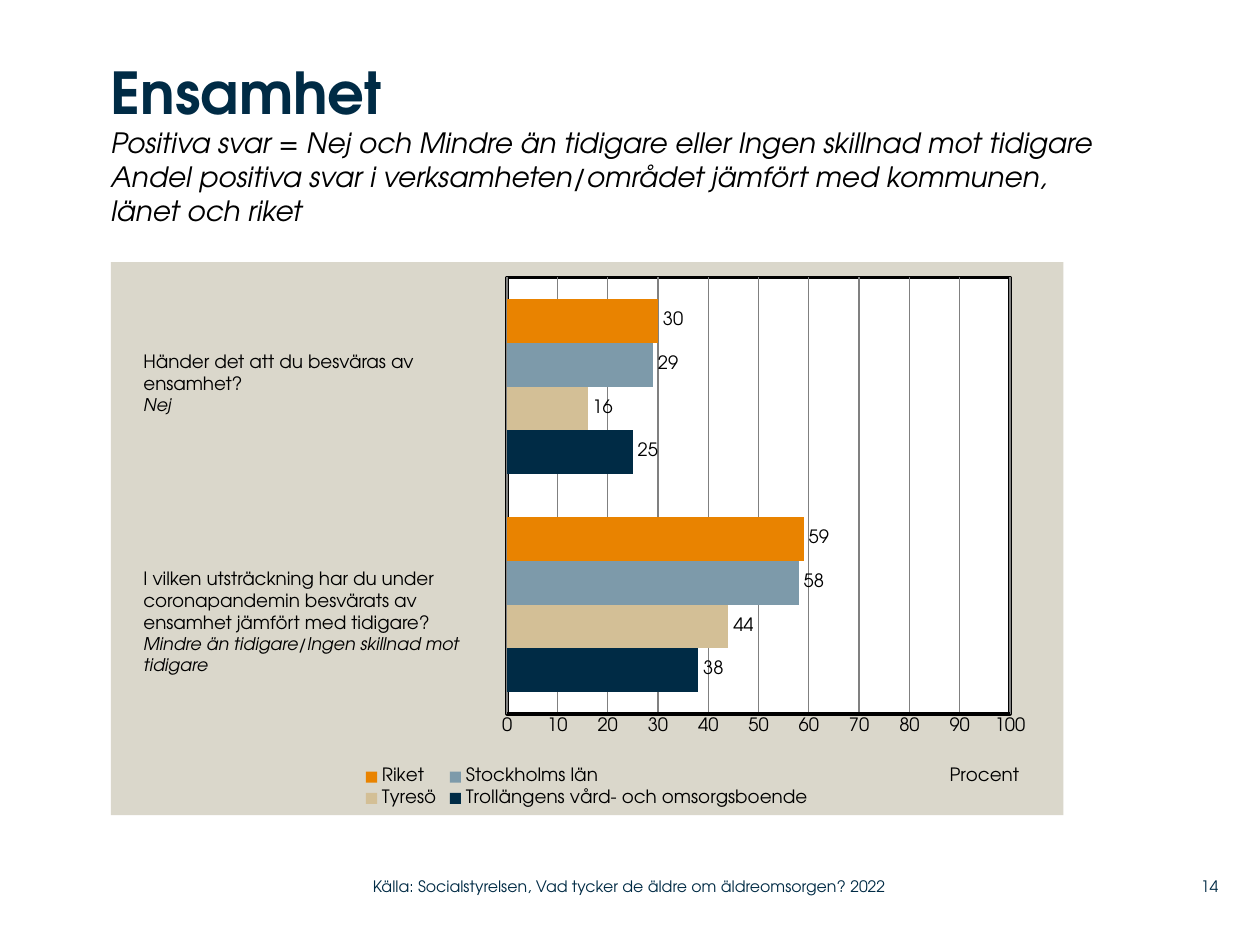
from lxml import etree
from pptx import Presentation
from pptx.chart.data import CategoryChartData
from pptx.dml.color import RGBColor
from pptx.enum.chart import XL_CHART_TYPE, XL_LABEL_POSITION, XL_LEGEND_POSITION, XL_TICK_MARK
from pptx.enum.text import MSO_ANCHOR, PP_ALIGN
from pptx.oxml import parse_xml
from pptx.oxml.ns import nsdecls, qn
from pptx.util import Inches, Pt

BARS = XL_CHART_TYPE.BAR_CLUSTERED
BOTTOM = XL_LEGEND_POSITION.BOTTOM
OUTER = XL_LABEL_POSITION.OUTSIDE_END
NO_TICK = XL_TICK_MARK.NONE
TOP, MIDDLE = MSO_ANCHOR.TOP, MSO_ANCHOR.MIDDLE
LEFT, RIGHT = PP_ALIGN.LEFT, PP_ALIGN.RIGHT
FACE, NAVY, BLACK = "TeX Gyre Adventor", "002B45", "000000"


def color(code):
    return RGBColor.from_string(code)


def layout(x, y, w=None, h=None, inner=False):
    """Manual chart layout, in shares of the chart's size."""
    node = parse_xml(f"<c:layout {nsdecls('c')}><c:manualLayout/></c:layout>")
    parts = [("layoutTarget", "inner")] if inner else []
    parts += [("xMode", "edge"), ("yMode", "edge"), ("x", x), ("y", y)]
    parts += [("w", w), ("h", h)] if w else []
    for tag, val in parts:
        etree.SubElement(node[0], qn(f"c:{tag}")).set("val", str(val))
    return node


deck = Presentation()
deck.slide_width, deck.slide_height = Inches(10), Inches(7.5)
slide = deck.slides.add_slide(deck.slide_layouts[6])

# Chart
data = CategoryChartData()
data.categories = ["1", "2"]
rows = [
    ("Trollängens vård- och omsorgsboende", (38, 25), NAVY),
    ("Tyresö", (44, 16), "D3BF96"),
    ("Stockholms län", (58, 29), "7D9AAA"),
    ("Riket", (59, 30), "E98300"),
]
for name, vals, _ in rows:
    data.add_series(name, vals)
chart = slide.shapes.add_chart(
    BARS, Inches(0.88), Inches(2.08), Inches(7.56), Inches(4.39), data).chart
chart.has_title = False
chart.font.name, chart.font.size = FACE, Pt(10.5)
chart.font.color.rgb = color(BLACK)

# Bars and their values
plot = chart.plots[0]
plot.gap_width, plot.overlap = 100, 0
plot.vary_by_categories = False
for bar, (_, _, fill) in zip(plot.series, rows):
    bar.format.fill.solid()
    bar.format.fill.fore_color.rgb = color(fill)
plot.has_data_labels = True
plot.data_labels.show_value = True
plot.data_labels.position = OUTER

# Axes
chart.category_axis.visible = False
axis = chart.value_axis
axis.minimum_scale, axis.maximum_scale, axis.major_unit = 0, 100, 10
axis.major_tick_mark = axis.minor_tick_mark = NO_TICK
axis.format.line.color.rgb = color(BLACK)
axis.format.line.width = Pt(2)
axis.has_major_gridlines = True
grid = axis.major_gridlines.format.line
grid.color.rgb, grid.width = color("808080"), Pt(0.75)
title = axis.axis_title
title.text_frame.text = "Procent"
font = title.text_frame.paragraphs[0].runs[0].font
font.name, font.size, font.bold = FACE, Pt(10.5), False
font.color.rgb = color(BLACK)
body = title.text_frame._txBody.find(qn("a:bodyPr"))
body.set("rot", "0")
node = title._element
for old in node.findall(qn("c:layout")):
    node.remove(old)
node.find(qn("c:tx")).addnext(layout(0.877, 0.905))

# Legend
chart.has_legend = True
legend = chart.legend
legend.position, legend.include_in_layout = BOTTOM, False
node = legend._element
for old in node.findall(qn("c:layout")):
    node.remove(old)
node.find(qn("c:legendPos")).addnext(layout(0.26, 0.908, 0.48, 0.085))

# Plot area and chart background
area = chart._chartSpace.chart.plotArea
for old in area.findall(qn("c:layout")):
    area.remove(old)
area.insert(0, layout(0.416, 0.028, 0.528, 0.789, True))
PAINT = "<c:spPr {}><a:solidFill><a:srgbClr val='{}'/></a:solidFill><a:ln{}</a:ln></c:spPr>"
edge = f" w='25400'><a:solidFill><a:srgbClr val='{BLACK}'/></a:solidFill>"
area.append(parse_xml(PAINT.format(nsdecls("c", "a"), "FFFFFF", edge)))
chart._chartSpace.chart.addnext(
    parse_xml(PAINT.format(nsdecls("c", "a"), "DAD7CB", "><a:noFill/>")))

# Texts: place, inset, anchor, alignment, lines (text, size, color, bold, italic)
sub = (16, BLACK, False, True)
ask = (10.5, BLACK, False, False)
reply = (10, BLACK, False, True)
foot = (9, NAVY, False, False)
texts = [
    ((0.88, 0.45, 7.81, 1.64), 0, TOP, LEFT, [
        ("Ensamhet", 33, NAVY, True, False),
        ("Positiva svar = Nej och Mindre än tidigare eller Ingen skillnad mot tidigare", *sub),
        ("Andel positiva svar i verksamheten/området jämfört med kommunen, länet och riket", *sub)]),
    ((1.04, 4.45, 2.94, 0.97), 0.1, TOP, LEFT, [
        ("I vilken utsträckning har du under coronapandemin besvärats av "
         "ensamhet jämfört med tidigare?", *ask),
        ("Mindre än tidigare/Ingen skillnad mot tidigare", *reply)]),
    ((1.04, 2.73, 2.94, 0.63), 0.1, TOP, LEFT, [
        ("Händer det att du besväras av", *ask),
        ("ensamhet?", *ask),
        ("Nej", *reply)]),
    ((2.96, 6.89, 4.43, 0.29), 0, MIDDLE, LEFT, [
        ("Källa: Socialstyrelsen, Vad tycker de äldre om äldreomsorgen? 2022", *foot)]),
    ((9.2, 6.89, 0.47, 0.29), 0, MIDDLE, RIGHT, [("14", *foot)]),
]
for place, pad, anchor, align, lines in texts:
    frame = slide.shapes.add_textbox(*map(Inches, place)).text_frame
    frame.word_wrap, frame.vertical_anchor = True, anchor
    frame.margin_left = frame.margin_right = Inches(pad)
    frame.margin_top = frame.margin_bottom = Inches(pad / 2)
    frame.text = "\n".join(line[0] for line in lines)
    for para, (_, size, tint, bold, slant) in zip(frame.paragraphs, lines):
        para.alignment = align
        font = para.runs[0].font
        font.name, font.size, font.bold, font.italic = FACE, Pt(size), bold, slant
        font.color.rgb = color(tint)

deck.save("out.pptx")
